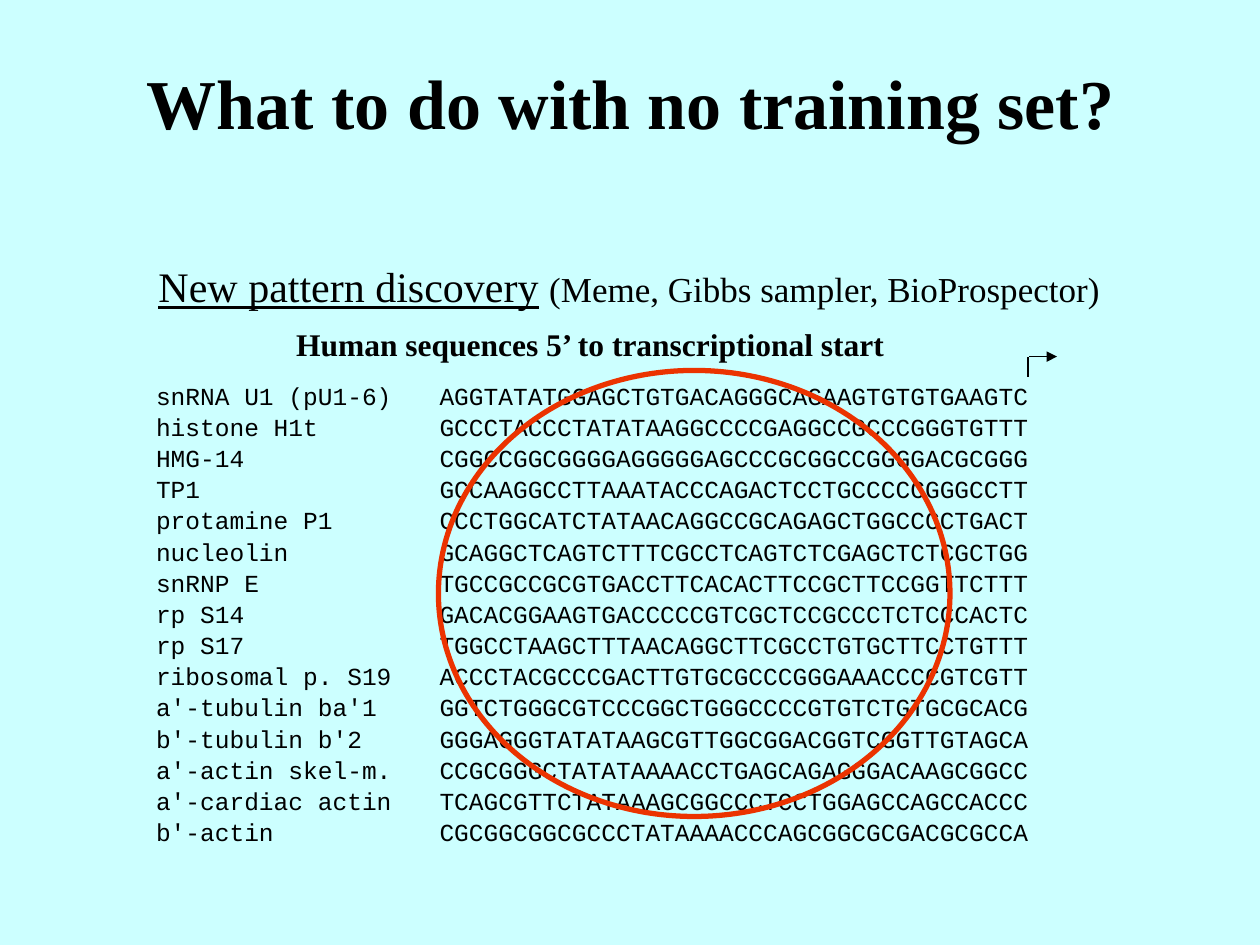
from lxml import etree
from pptx import Presentation
from pptx.dml.color import RGBColor
from pptx.enum.shapes import MSO_CONNECTOR, MSO_SHAPE
from pptx.enum.text import MSO_AUTO_SIZE, PP_ALIGN
from pptx.oxml.ns import qn
from pptx.util import Inches, Pt

LINE, OVAL = MSO_CONNECTOR.STRAIGHT, MSO_SHAPE.OVAL
GROW = MSO_AUTO_SIZE.SHAPE_TO_FIT_TEXT
LEFT, MID = PP_ALIGN.LEFT, PP_ALIGN.CENTER
SERIF, MONO = "Times New Roman", "Courier New"
INK, RED, SKY = "000000", "EB3300", "CCFFFF"


def color(code):
    return RGBColor.from_string(code)


def add_text(box, lines, face, align=LEFT):
    """Each line is a list of runs: (words, size, bold, underline)."""
    frame = slide.shapes.add_textbox(*map(Inches, box)).text_frame
    frame.word_wrap = True
    frame.auto_size = GROW
    for i, runs in enumerate(lines):
        para = frame.add_paragraph() if i else frame.paragraphs[0]
        para.alignment = align
        for words, size, bold, under in runs:
            run = para.add_run()
            run.text = words
            font = run.font
            font.name, font.size = face, Pt(size)
            font.bold, font.underline = bold, under
            font.color.rgb = color(INK)
    return frame.paragraphs


deck = Presentation()
deck.slide_width, deck.slide_height = Inches(10), Inches(7.5)
slide = deck.slides.add_slide(deck.slide_layouts[6])
slide.background.fill.solid()
slide.background.fill.fore_color.rgb = color(SKY)

# Headings
heads = [
    ((0.92, 0.42, 8.17, 0.77), MID,
     [("What to do with no training set?", 40, True, False)]),
    ((1.16, 2.02, 7.94, 0.5), LEFT,
     [("New pattern discovery", 24, False, True),
      (" ", 24, False, False),
      ("(Meme, Gibbs sampler, BioProspector)", 20, False, False)]),
    ((1.26, 2.53, 6.85, 0.4), MID,
     [("Human sequences 5’ to transcriptional start", 18, True, False)]),
]
for box, align, runs in heads:
    para = add_text(box, [runs], SERIF, align)[0]
    gap = etree.SubElement(para._p.get_or_add_pPr(), qn("a:spcBef"))
    etree.SubElement(gap, qn("a:spcPct")).set("val", "50000")

# Gene names and sequences, split by one tab stop
genes = [
    ("snRNA U1 (pU1-6)", "AGGTATATGGAGCTGTGACAGGGCAGAAGTGTGTGAAGTC"),
    ("histone H1t", "GCCCTACCCTATATAAGGCCCCGAGGCCGCCCGGGTGTTT"),
    ("HMG-14", "CGGCCGGCGGGGAGGGGGAGCCCGCGGCCGGGGACGCGGG"),
    ("TP1", "GCCAAGGCCTTAAATACCCAGACTCCTGCCCCCGGGCCTT"),
    ("protamine P1", "CCCTGGCATCTATAACAGGCCGCAGAGCTGGCCCCTGACT"),
    ("nucleolin", "GCAGGCTCAGTCTTTCGCCTCAGTCTCGAGCTCTCGCTGG"),
    ("snRNP E", "TGCCGCCGCGTGACCTTCACACTTCCGCTTCCGGTTCTTT"),
    ("rp S14", "GACACGGAAGTGACCCCCGTCGCTCCGCCCTCTCCCACTC"),
    ("rp S17", "TGGCCTAAGCTTTAACAGGCTTCGCCTGTGCTTCCTGTTT"),
    ("ribosomal p. S19", "ACCCTACGCCCGACTTGTGCGCCCGGGAAACCCCGTCGTT"),
    ("a'-tubulin ba'1", "GGTCTGGGCGTCCCGGCTGGGCCCCGTGTCTGTGCGCACG"),
    ("b'-tubulin b'2", "GGGAGGGTATATAAGCGTTGGCGGACGGTCGGTTGTAGCA"),
    ("a'-actin skel-m.", "CCGCGGGCTATATAAAACCTGAGCAGAGGGACAAGCGGCC"),
    ("a'-cardiac actin", "TCAGCGTTCTATAAAGCGGCCCTCCTGGAGCCAGCCACCC"),
    ("b'-actin", "CGCGGCGGCGCCCTATAAAACCCAGCGGCGCGACGCGCCA"),
]
lines = [[(f"{name}\t{bases}", 14, False, False)] for name, bases in genes]
for para in add_text((1.14, 2.96, 8.06, 3.59), lines, MONO):
    para.line_spacing = 1.06
    tabs = etree.SubElement(para._p.get_or_add_pPr(), qn("a:tabLst"))
    stop = etree.SubElement(tabs, qn("a:tab"))
    stop.set("pos", str(Inches(2.25)))
    stop.set("algn", "l")

# Transcription start arrow
for ends, tip in [((8.16, 2.99, 8.16, 2.83), False),
                  ((8.17, 2.83, 8.39, 2.83), True)]:
    edge = slide.shapes.add_connector(LINE, *map(Inches, ends))
    edge.line.color.rgb = color(INK)
    edge.line.width = Pt(0.75)
    if tip:
        head = etree.SubElement(edge.line._get_or_add_ln(), qn("a:tailEnd"))
        head.set("type", "triangle")
    etree.SubElement(edge._element.spPr, qn("a:effectLst"))

# Ring around the shared pattern
ring = slide.shapes.add_shape(OVAL, *map(Inches, (3.48, 2.94, 4.06, 3.54)))
ring.shadow.inherit = False
ring.fill.background()
ring.line.color.rgb = color(RED)
ring.line.width = Pt(3)

deck.save("out.pptx")
